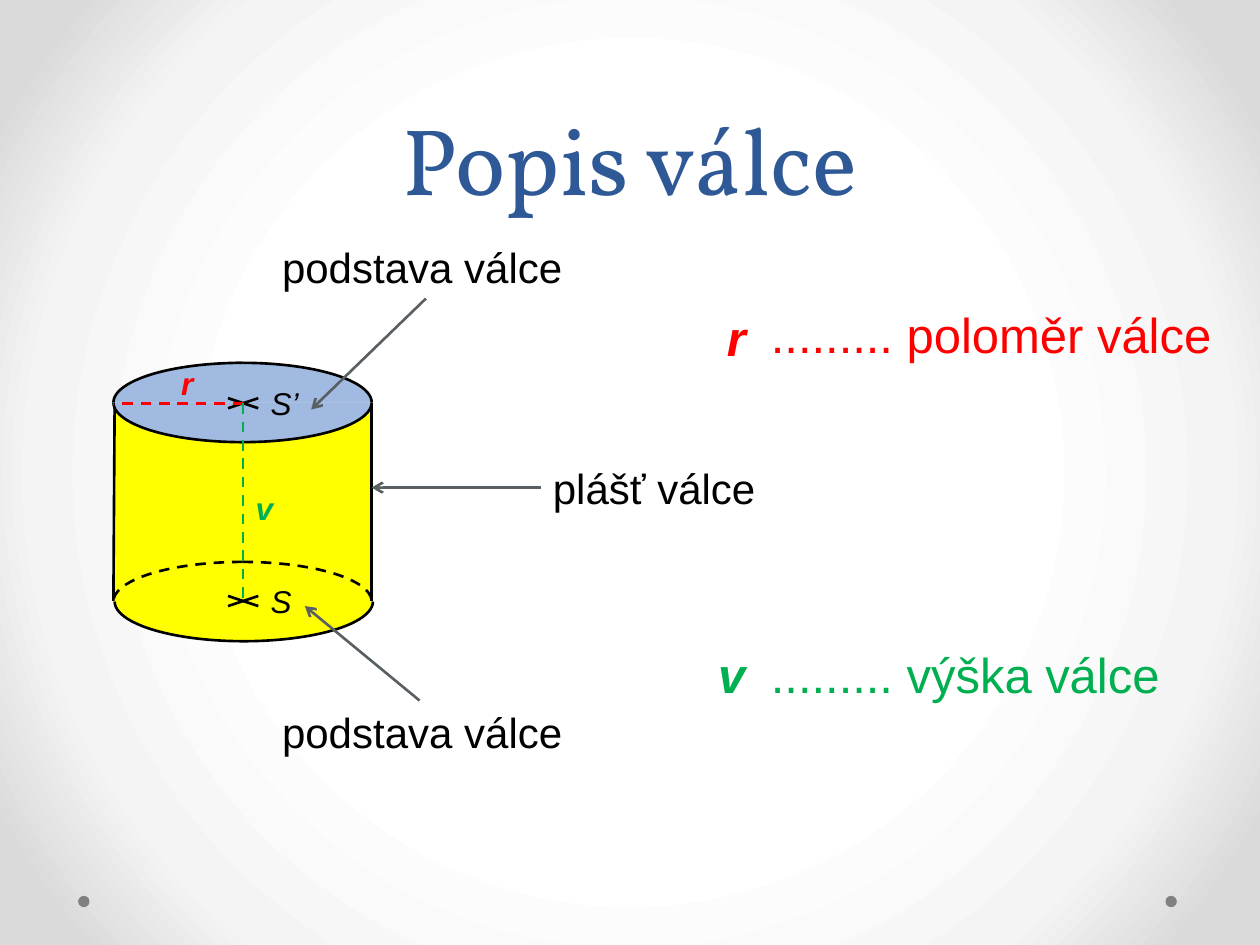
from itertools import product

from pptx import Presentation
from pptx.dml.color import RGBColor
from pptx.enum.dml import MSO_LINE_DASH_STYLE as Dash
from pptx.enum.shapes import MSO_CONNECTOR as Connector, MSO_SHAPE as Shape
from pptx.enum.text import MSO_ANCHOR as Anchor, MSO_AUTO_SIZE as AutoSize, PP_ALIGN as Align
from pptx.oxml import parse_xml
from pptx.oxml.ns import nsdecls, qn
from pptx.util import Inches, Pt

BLACK, RED, GREEN, YELLOW = "000000", "FF0000", "00B050", "FFFF00"
BLUE, TOP_BLUE, GREY, DOT_GREY = "2F5897", "A0BAE1", "586064", "808080"
LEFT, WIDTH, OVAL_HEIGHT = 0.9, 2.05, 0.63
CENTER, RIGHT = 1.93, 2.95
TOP, BOTTOM = 3.2, 4.77


def color(value):
    return RGBColor.from_string(value)


class SlideBuilder:
    """Holds the drawing style and the slide being built."""

    def __init__(self, page, font="Arial", weight=1.5):
        self.page = page
        self.font = font
        self.weight = Pt(weight)

    def background(self, stops):
        self.page.background.fill.solid()
        solid = next(self.page.element.iter(qn("a:solidFill")))
        marks = "".join(
            f'<a:gs pos="{place * 1000}"><a:srgbClr val="{value}"/></a:gs>'
            for place, value in stops
        )
        gradient = parse_xml(
            f'<a:gradFill {nsdecls("a")} rotWithShape="1"><a:gsLst>{marks}</a:gsLst>'
            '<a:path path="circle"><a:fillToRect l="50000" t="50000" r="50000" b="50000"/>'
            "</a:path></a:gradFill>"
        )
        solid.getparent().replace(solid, gradient)

    def outline(self, line, value, dashed):
        line.color.rgb = color(value)
        line.width = self.weight
        if dashed:
            line.dash_style = Dash.DASH

    def shape(self, kind, at, fill=None, line=None, dashed=False):
        shape = self.page.shapes.add_shape(kind, *map(Inches, at))
        shape.shadow.inherit = False
        if fill:
            shape.fill.solid()
            shape.fill.fore_color.rgb = color(fill)
        else:
            shape.fill.background()
        if line:
            self.outline(shape.line, line, dashed)
        else:
            shape.line.fill.background()
        return shape

    def arc(self, at, flip="", start=None, **style):
        arc = self.shape(Shape.ARC, at, line=BLACK, **style)
        if start:
            arc.adjustments[0] = start
        frame = arc.element.spPr.get_or_add_xfrm()
        for axis in flip:
            frame.set(f"flip{axis}", "1")

    def line(self, start, end, value=BLACK, dashed=False, arrow=False):
        ends = map(Inches, (*start, *end))
        line = self.page.shapes.add_connector(Connector.STRAIGHT, *ends)
        self.outline(line.line, value, dashed)
        if arrow:
            line.line._get_or_add_ln().append(
                parse_xml(f'<a:tailEnd {nsdecls("a")} type="arrow"/>')
            )
        line.element.spPr.append(parse_xml(f'<a:effectLst {nsdecls("a")}/>'))

    def cross(self, x, y):
        for slope in (1, -1):
            self.line((x - 0.12, y - 0.04 * slope), (x + 0.12, y + 0.04 * slope))

    def text(self, at, words, size, value=BLACK, **font):
        box = self.page.shapes.add_textbox(*map(Inches, at))
        frame = box.text_frame
        frame.word_wrap = False
        frame.auto_size = AutoSize.SHAPE_TO_FIT_TEXT
        span = frame.paragraphs[0].add_run()
        span.text = words
        span.font.color.rgb = color(value)
        for name, setting in {"name": self.font, "size": Pt(size), **font}.items():
            setattr(span.font, name, setting)
        return frame

    def title(self, at, words):
        frame = self.text(at, words, 54, BLUE, name="Vollkorn")
        settings = {"auto_size": AutoSize.NONE, "word_wrap": True, "vertical_anchor": Anchor.BOTTOM}
        for name, setting in settings.items():
            setattr(frame, name, setting)
        para = frame.paragraphs[0]
        para.alignment = Align.CENTER
        para.line_spacing = Pt(58)


def draw_cylinder(builder):
    builder.shape(Shape.RECTANGLE, (LEFT, TOP, WIDTH, 1.58), YELLOW)
    builder.line((RIGHT, TOP), (RIGHT, BOTTOM))
    builder.line((LEFT + 0.01, TOP), (LEFT, BOTTOM))
    base = (LEFT, 4.46, WIDTH, OVAL_HEIGHT)
    for flip in ("", "H"):
        builder.arc(base, flip, dashed=True)
    for flip in ("V", "HV"):
        builder.arc((LEFT + 0.01, *base[1:]), flip, fill=YELLOW)
    for vertical, horizontal in product(("", "V"), ("", "H")):
        start = None if horizontal else 159.32 if vertical else 156.02
        builder.arc((LEFT, 2.88, WIDTH, OVAL_HEIGHT), horizontal + vertical, start, fill=TOP_BLUE)


def main():
    deck = Presentation()
    deck.slide_width, deck.slide_height = Inches(10), Inches(7.5)
    builder = SlideBuilder(deck.slides.add_slide(deck.slide_layouts[6]))
    builder.background([(50, "FFFFFF"), (76, "F4F4F4"), (92, "DADADA")])
    for left in (9.25, 0.62):
        builder.shape(Shape.OVAL, (left, 7.11, 0.09, 0.09), DOT_GREY)

    draw_cylinder(builder)
    builder.title((0.5, 0, 9, 1.75), "Popis válce")
    for height in (TOP, BOTTOM):
        builder.cross(CENTER, height)
    builder.line((CENTER, TOP), (LEFT, TOP), RED, dashed=True)
    builder.line((CENTER, TOP), (CENTER, BOTTOM), GREEN, dashed=True)

    for at, words, value, bold in (
        ((2.05, 4.57, 0.37, 0.4), "S", BLACK, False),
        ((2.05, 3, 0.43, 0.4), "S’", BLACK, False),
        ((1.93, 3.83, 0.34, 0.4), "v", GREEN, True),
        ((1.34, 2.84, 0.3, 0.4), "r", RED, True),
    ):
        builder.text(at, words, 18, value, bold=bold, italic=True)

    for at, words, start, end in (
        ((2.14, 1.87, 2.49, 0.51), "podstava válce", (3.38, 2.37), (2.47, 3.25)),
        ((4.29, 3.62, 1.83, 0.5), "plášť válce", (4.29, 3.87), (RIGHT, 3.87)),
        ((2.14, 5.56, 2.45, 0.51), "podstava válce", (3.33, 5.56), (2.42, 4.81)),
    ):
        builder.line(start, end, GREY, arrow=True)
        builder.text(at, words, 24)

    for symbol, place, meaning, top, width, value in (
        ("r", (5.67, 2.39, 0.35, 0.57), "poloměr válce", 2.37, 3.74, RED),
        ("v", (5.6, 5.07, 0.42, 0.57), "výška válce", 5.07, 3.43, GREEN),
    ):
        builder.text((6.02, top, width, 0.57), f"......... {meaning}", 28, value)
        builder.text(place, symbol, 28, value, bold=True, italic=True)

    deck.save("out.pptx")


if __name__ == "__main__":
    main()
